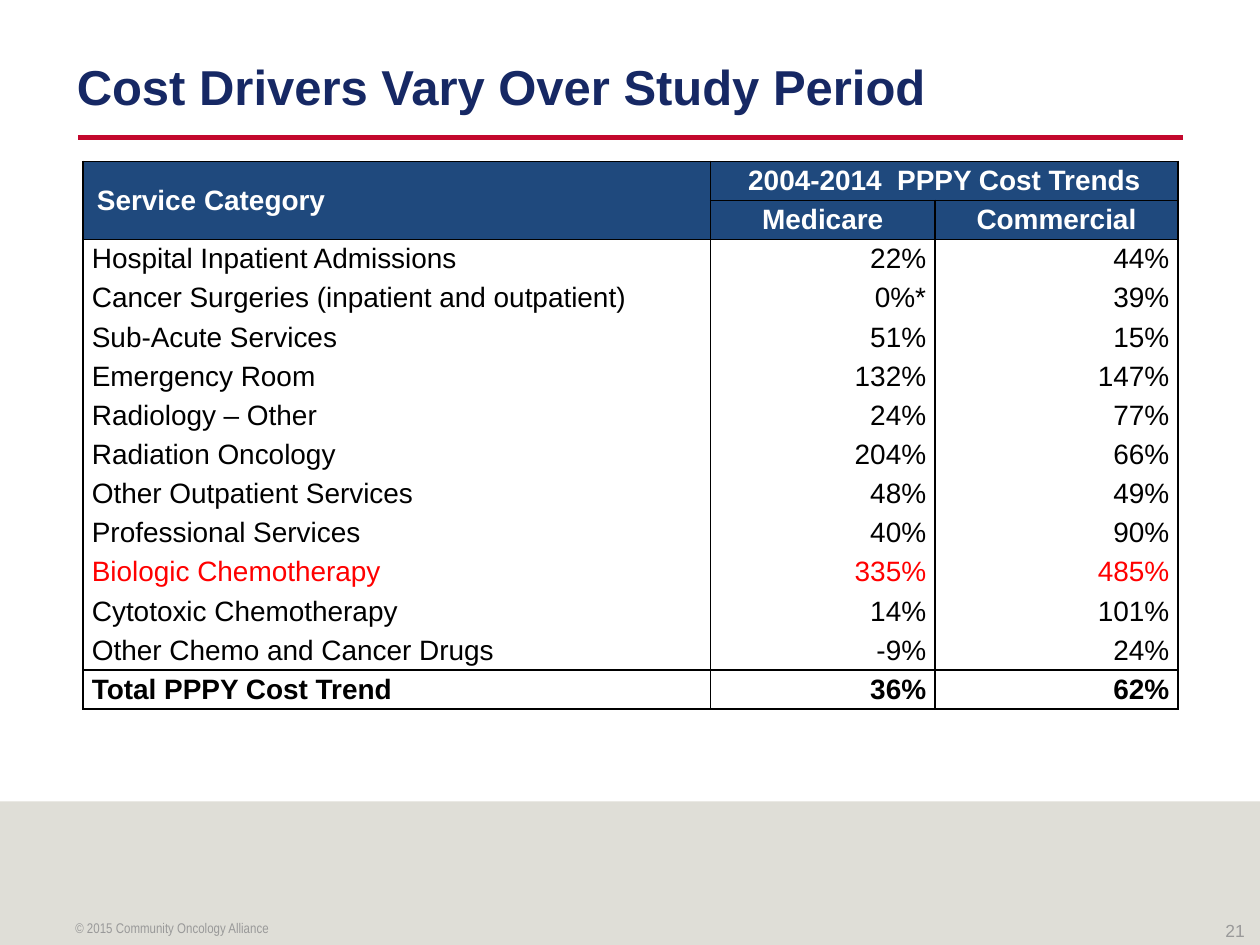
from dataclasses import dataclass

from lxml.etree import SubElement
from pptx import Presentation
from pptx.dml.color import RGBColor as RGB
from pptx.enum.shapes import MSO_CONNECTOR as Connector, MSO_SHAPE as Shape
from pptx.enum.text import MSO_ANCHOR as Anchor, PP_ALIGN as Align
from pptx.oxml.ns import qn
from pptx.util import Inches, Pt


@dataclass(frozen=True)
class Theme:
    font: str = "Arial"
    narrow: str = "Arial Narrow"
    title: str = "162864"
    rule: str = "C3082D"
    band: str = "DFDED7"
    muted: str = "999999"
    header: str = "1F497D"
    white: str = "FFFFFF"
    ink: str = "000000"
    alert: str = "FF0000"
    title_size: int = 28
    table_size: int = 16
    number_size: int = 10
    footer_size: int = 8


THEME = Theme()
GRID_COLUMNS, GRID_ROWS = 100, 75
HEADER_ROWS = 2
HIGHLIGHT = "Biologic Chemotherapy"
COLUMN_WIDTHS = (49.8, 17.8, 19.3)
ROW_HEIGHT = 3.11
TRENDS = [
    ("Service Category", "2004-2014  PPPY Cost Trends", ""),
    ("", "Medicare", "Commercial"),
    ("Hospital Inpatient Admissions", "22%", "44%"),
    ("Cancer Surgeries (inpatient and outpatient)", "0%*", "39%"),
    ("Sub-Acute Services", "51%", "15%"),
    ("Emergency Room", "132%", "147%"),
    ("Radiology – Other", "24%", "77%"),
    ("Radiation Oncology", "204%", "66%"),
    ("Other Outpatient Services", "48%", "49%"),
    ("Professional Services", "40%", "90%"),
    (HIGHLIGHT, "335%", "485%"),
    ("Cytotoxic Chemotherapy", "14%", "101%"),
    ("Other Chemo and Cancer Drugs", "-9%", "24%"),
    ("Total PPPY Cost Trend", "36%", "62%"),
]


def write(frame, text, *, size, color, font=THEME.font, bold=False, align=Align.LEFT):
    paragraph = frame.paragraphs[0]
    paragraph.alignment = align
    paragraph.font.size = Pt(size)
    if not text:
        return
    run = paragraph.add_run()
    run.text = text
    run.font.name, run.font.size, run.font.bold = font, Pt(size), bold
    run.font.color.rgb = RGB.from_string(color)


class SlideBuilder:
    def __init__(self, deck, theme):
        self.deck, self.theme = deck, theme
        self.slide = deck.slides.add_slide(deck.slide_layouts[6])

    def x(self, columns):
        return round(self.deck.slide_width * columns / GRID_COLUMNS)

    def y(self, rows):
        return round(self.deck.slide_height * rows / GRID_ROWS)

    def box(self, left, top, width, height):
        return self.x(left), self.y(top), self.x(width), self.y(height)

    def band(self, area, color):
        band = self.slide.shapes.add_shape(Shape.RECTANGLE, *self.box(*area))
        band.shadow.inherit = False
        band.fill.solid()
        band.fill.fore_color.rgb = RGB.from_string(color)
        band.line.fill.background()

    def rule(self, left, right, row, color, weight):
        rule = self.slide.shapes.add_connector(
            Connector.STRAIGHT, self.x(left), self.y(row), self.x(right), self.y(row))
        rule.line.color.rgb = RGB.from_string(color)
        rule.line.width = Pt(weight)
        SubElement(rule._element.spPr, qn("a:effectLst"))

    def text(self, area, text, insets=(0.1, 0.05, 0.1, 0.05), anchor=Anchor.TOP, **style):
        frame = self.slide.shapes.add_textbox(*self.box(*area)).text_frame
        frame.word_wrap = True
        frame.vertical_anchor = anchor
        (frame.margin_left, frame.margin_top,
         frame.margin_right, frame.margin_bottom) = map(Inches, insets)
        write(frame, text, **style)

    def borders(self, cell, edges):
        properties = cell._tc.get_or_add_tcPr()
        for edge in "LRTB":
            line = SubElement(properties, qn(f"a:ln{edge}"), w=str(Pt(1)))
            if edge in edges:
                fill = SubElement(line, qn("a:solidFill"))
                SubElement(fill, qn("a:srgbClr"), val=self.theme.ink)
            else:
                SubElement(line, qn("a:noFill"))

    def cell(self, cell, text, row, column, last, highlighted):
        theme = self.theme
        header, total = row < HEADER_ROWS, row == last
        top = row <= HEADER_ROWS or total
        bottom = header or row >= last - 1
        self.borders(cell, "LR" + "T" * top + "B" * bottom)
        if header:
            cell.fill.solid()
            cell.fill.fore_color.rgb = RGB.from_string(theme.header)
        else:
            cell.fill.background()
        cell.vertical_anchor = Anchor.MIDDLE
        cell.margin_left = Inches(0.11 if header and column == 0 else 0.07)
        cell.margin_right = Inches(0.07)
        cell.margin_top = cell.margin_bottom = 0
        color = theme.white if header else theme.alert if highlighted else theme.ink
        align = Align.LEFT if column == 0 else Align.CENTER if header else Align.RIGHT
        write(cell.text_frame, text, size=theme.table_size, color=color,
              bold=header or total, align=align)

    def table(self, left, top, widths, row_height, rows):
        area = self.box(left, top, sum(widths), row_height * len(rows))
        table = self.slide.shapes.add_table(len(rows), len(widths), *area).table
        table.first_row = table.horz_banding = False
        for column, width in zip(table.columns, widths):
            column.width = self.x(width)
        for table_row in table.rows:
            table_row.height = self.y(row_height)
        for r, values in enumerate(rows):
            for c, value in enumerate(values):
                self.cell(table.cell(r, c), value, r, c, len(rows) - 1,
                          values[0] == HIGHLIGHT)
        table.cell(0, 0).merge(table.cell(1, 0))
        table.cell(0, 1).merge(table.cell(0, 2))


def main():
    deck = Presentation()
    deck.slide_width, deck.slide_height = Inches(10), Inches(7.5)
    page = SlideBuilder(deck, THEME)
    page.band((0, 63.6, 100, 11.4), THEME.band)
    page.rule(6.2, 93.9, 10.9, THEME.rule, 3)
    page.text((6.1, 3.3, 90, 7.6), "Cost Drivers Vary Over Study Period",
              insets=(0, 0, 0.1, 0.05), anchor=Anchor.MIDDLE,
              size=THEME.title_size, color=THEME.title, bold=True)
    page.text((80.5, 72.5, 18.3, 2.3), "21", insets=(0.1, 0.05, 0, 0.05),
              size=THEME.number_size, color=THEME.muted, align=Align.RIGHT)
    page.text((5, 72.5, 71.7, 2.5), "© 2015 Community Oncology Alliance",
              size=THEME.footer_size, color=THEME.muted, font=THEME.narrow)
    page.table(6.6, 12.8, COLUMN_WIDTHS, ROW_HEIGHT, TRENDS)
    deck.save("out.pptx")


if __name__ == "__main__":
    main()
